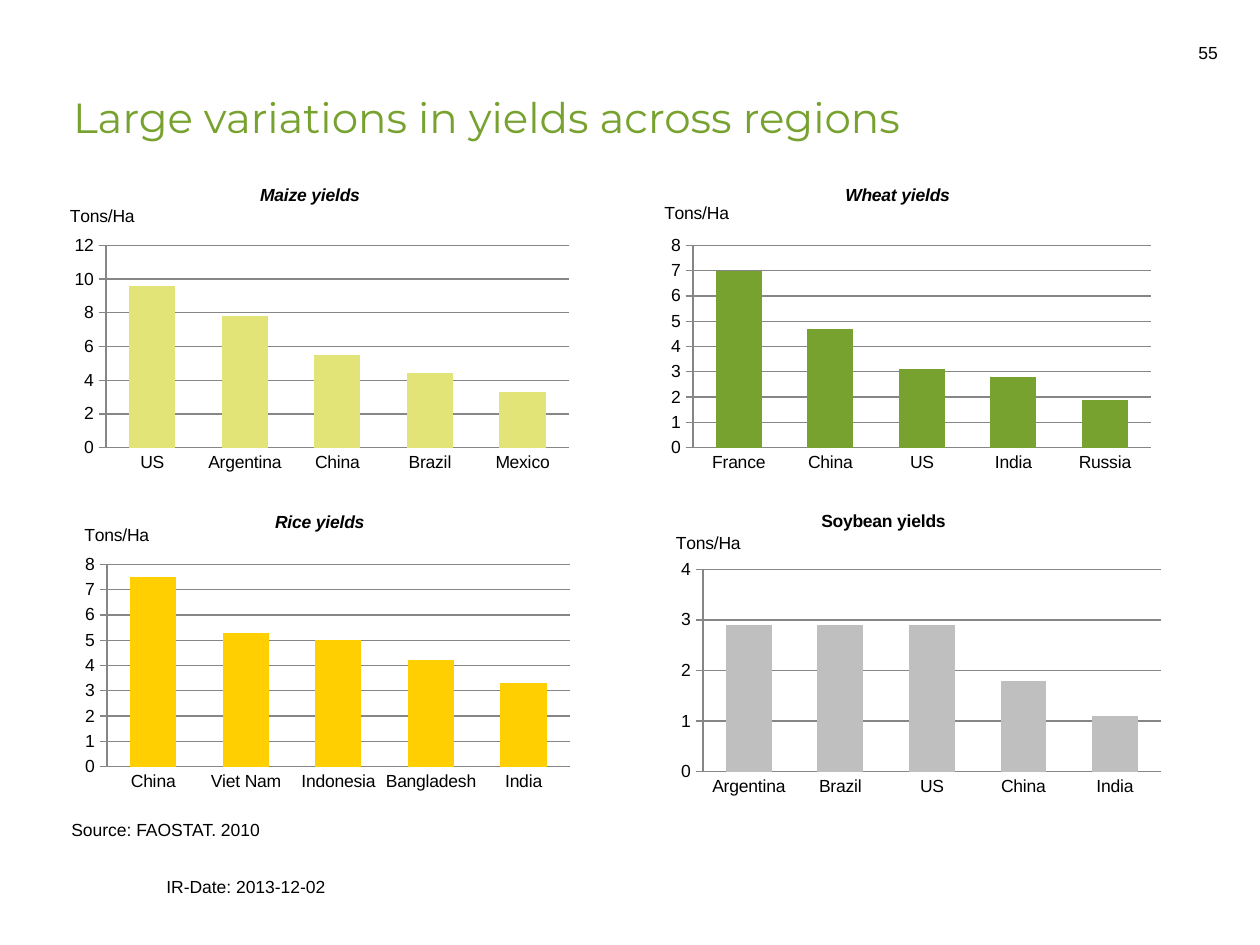
from lxml import etree
from pptx import Presentation
from pptx.chart.data import CategoryChartData
from pptx.dml.color import RGBColor
from pptx.enum.chart import XL_CHART_TYPE, XL_TICK_MARK
from pptx.enum.text import MSO_ANCHOR, MSO_AUTO_SIZE, PP_ALIGN
from pptx.oxml.ns import qn
from pptx.util import Pt

COLUMNS = XL_CHART_TYPE.COLUMN_CLUSTERED
TICK_NONE, TICK_OUT = XL_TICK_MARK.NONE, XL_TICK_MARK.OUTSIDE
ANCHOR_BOTTOM, FIXED_SIZE, ALIGN_LEFT = MSO_ANCHOR.BOTTOM, MSO_AUTO_SIZE.NONE, PP_ALIGN.LEFT
PX = 914400 / 126
CHART_WIDTH, CHART_HEIGHT = 561, 324


def style(font, color="000000", **values):
    for name, value in {"name": "Arial", "size": Pt(10), "bold": False, **values}.items():
        setattr(font, name, value)
    font.color.rgb = RGBColor.from_string(color)


def add_layout(parent, index, **values):
    for old in parent.findall(qn("c:layout")):
        parent.remove(old)
    layout = etree.Element(qn("c:layout"))
    manual = etree.SubElement(layout, qn("c:manualLayout"))
    for name, value in values.items():
        etree.SubElement(manual, qn(f"c:{name}")).set("val", str(value))
    parent.insert(index, layout)


deck = Presentation()
deck.slide_width, deck.slide_height = round(1260 * PX), round(945 * PX)
page = deck.slides.add_slide(deck.slide_layouts[5])

title = page.shapes.title
title.left, title.top, title.width, title.height = [round(n * PX) for n in (73, 31, 1108, 117)]
frame = title.text_frame
frame.text = "Large variations in yields across regions"
frame_format = {"margin_left": 0, "vertical_anchor": ANCHOR_BOTTOM,
                "auto_size": FIXED_SIZE, "word_wrap": True}
for name, value in frame_format.items():
    setattr(frame, name, value)
para = frame.paragraphs[0]
para.alignment = ALIGN_LEFT
style(para.runs[0].font, "78A22F", name="Montserrat", size=Pt(24))

labels = [
    ("IR-Date: 2013-12-02", 154, 870, 367, True),
    ("55", 1186, 36, 47, False),
    ("Source: FAOSTAT. 2010", 59, 813, 221, False),
]
for text, left, top, width, wrap in labels:
    box = page.shapes.add_textbox(*[round(n * PX) for n in (left, top, width, 34)])
    box.text_frame.word_wrap = wrap
    box.text_frame.text = text
    style(box.text_frame.paragraphs[0].runs[0].font)

charts = [
    ("Maize yields", True, (32, 179), (225, 1), (35, 22), 0.825, 101, 12, 2, "E2E477",
     {"US": 9.6, "Argentina": 7.8, "China": 5.5, "Brazil": 4.4, "Mexico": 3.3}),
    ("Wheat yields", True, (619, 179), (223, 1), (42, 19), 0.816, 100, 8, 1, "78A22F",
     {"France": 7, "China": 4.7, "US": 3.1, "India": 2.8, "Russia": 1.9}),
    ("Rice yields", True, (33, 498), (239, 9), (48, 22), 0.825, 100, 8, 1, "FFCF01",
     {"China": 7.5, "Viet Nam": 5.3, "Indonesia": 5, "Bangladesh": 4.2, "India": 3.3}),
    ("Soybean yields", False, (629, 503), (189, 4), (44, 25), 0.816, 100, 4, 1, "BFBFBF",
     {"Argentina": 2.9, "Brazil": 2.9, "US": 2.9, "China": 1.8, "India": 1.1}),
]
for (heading, italic, corner, heading_at, unit_at, plot_width, gap,
     maximum, step, color, yields) in charts:
    data = CategoryChartData()
    data.categories = list(yields)
    data.add_series("Series 1", list(yields.values()))
    bounds = [round(n * PX) for n in (*corner, CHART_WIDTH, CHART_HEIGHT)]
    chart = page.shapes.add_chart(COLUMNS, *bounds, data).chart
    style(chart.font)
    chart.has_legend = False

    plot = chart.plots[0]
    plot.gap_width = gap
    plot.vary_by_categories = False
    fill = plot.series[0].format.fill
    fill.solid()
    fill.fore_color.rgb = RGBColor.from_string(color)

    value_axis, category_axis = chart.value_axis, chart.category_axis
    axis_format = {"minimum_scale": 0, "maximum_scale": maximum, "major_unit": step,
                   "major_tick_mark": TICK_OUT, "has_major_gridlines": True}
    for name, value in axis_format.items():
        setattr(value_axis, name, value)
    value_axis.tick_labels.number_format = "#,##0"
    value_axis.tick_labels.number_format_is_linked = False
    category_axis.major_tick_mark = TICK_NONE
    for part in (value_axis, category_axis, value_axis.major_gridlines):
        part.format.line.color.rgb = RGBColor.from_string("868686")
        part.format.line.width = Pt(0.75)

    chart.chart_title.include_in_layout = True
    titles = [
        (chart.chart_title, heading, heading_at, {"bold": True, "italic": italic}),
        (value_axis.axis_title, "Tons/Ha", unit_at, {}),
    ]
    for item, text, _, font_format in titles:
        item.text_frame.text = text
        style(item.text_frame.paragraphs[0].runs[0].font, **font_format)
    for element, (_, _, (x, y), _) in zip(chart.element.iter(qn("c:title")), titles):
        element.find(".//" + qn("a:bodyPr")).set("rot", "0")
        add_layout(element, 1, xMode="edge", yMode="edge",
                   x=round(x / CHART_WIDTH, 3), y=round(y / CHART_HEIGHT, 3))
    add_layout(chart.element.find(".//" + qn("c:plotArea")), 0, layoutTarget="inner",
               xMode="edge", yMode="edge", x=0.132, y=0.205, w=plot_width, h=0.625)

deck.save("out.pptx")
